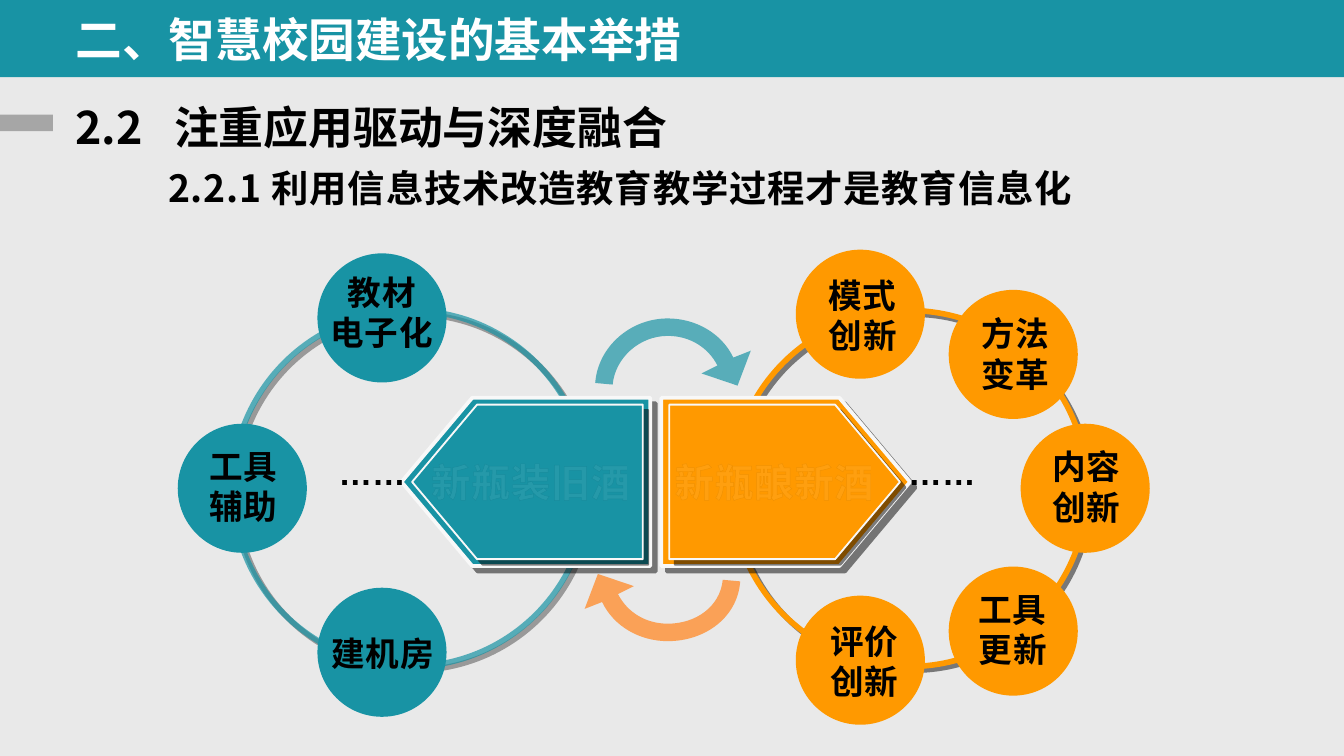
from dataclasses import dataclass

from lxml import etree
from pptx import Presentation
from pptx import util as u
from pptx.dml import color as c
from pptx.enum import shapes, text
from pptx.oxml import ns


@dataclass(frozen=True)
class Theme:
    teal: str = "1893A4"
    gold: str = "FF9900"
    peach: str = "FF8F33"
    grey: str = "A6A6A6"
    back: str = "E9E9E9"
    pale: str = "F8F8F8"
    white: str = "FFFFFF"
    black: str = "000000"
    dim: str = "080808"
    edge: str = "101A26"
    sans: str = "Noto Sans CJK SC"
    plain: str = "Arial"
    title: float = 25
    head: float = 24
    sub: float = 20
    core: float = 21
    label: float = 18


T = Theme()
KIND = shapes.MSO_SHAPE
DISC = 2.44
MID = (12.62, 9.07)  # centre between the two curved arrows


def rgb(tone):
    return c.RGBColor.from_string(tone)


def child(node, tag, **attrs):
    return etree.SubElement(node, ns.qn(tag), {k: str(v) for k, v in attrs.items()})


def fade(node, share):
    """Set the opacity, in percent, of the solid colour below node."""
    tone = node.find(ns.qn("a:solidFill")).find(ns.qn("a:srgbClr"))
    child(tone, "a:alpha", val=share * 1000)


def paint(item, fill=None, line=None, width=1):
    item.shadow.inherit = False
    if fill:
        item.fill.solid()
        item.fill.fore_color.rgb = rgb(fill)
    else:
        item.fill.background()
    if line:
        item.line.color.rgb = rgb(line)
        item.line.width = u.Pt(width)
    else:
        item.line.fill.background()


def shape(pool, kind, x, y, w, h, **style):
    item = pool.add_shape(kind, *map(u.Cm, (x, y, w, h)))
    paint(item, **style)
    return item


def shade(item, tone, dist):
    """Cast a hard, half-clear shadow to the lower right."""
    glow = item._element.spPr.find(ns.qn("a:effectLst"))
    cast = child(glow, "a:outerShdw", blurRad=0, dist=u.Pt(dist),
                 dir=45 * 60000, algn="ctr", rotWithShape=0)
    child(child(cast, "a:srgbClr", val=tone), "a:alpha", val=50000)


def write(pool, words, x, y, w, h, size, tone=T.black, face=T.sans,
          trim=False, mid=False, wrap=True, lead=None, hang=None):
    """Add bold text; trim gives it a faint outline and wider tracking."""
    frame = pool.add_textbox(*map(u.Cm, (x, y, w, h))).text_frame
    frame.word_wrap = wrap
    if not lead:
        frame.auto_size = text.MSO_AUTO_SIZE.SHAPE_TO_FIT_TEXT
    frame.text = words
    for para in frame.paragraphs:
        props = para._p.get_or_add_pPr()
        if hang:
            props.set("marL", str(u.Cm(hang)))
            props.set("indent", str(-u.Cm(hang)))
        if mid:
            para.alignment = text.PP_ALIGN.CENTER
        if lead:
            para.line_spacing = u.Pt(lead)
        font = para.font
        font.size, font.bold, font.name = u.Pt(size), True, face
        font.color.rgb = rgb(tone)
        base = props.find(ns.qn("a:defRPr"))
        child(base, "a:ea", typeface=face)
        if trim:
            base.set("spc", "40")
            line = child(base, "a:ln", w=u.Pt(1.06))
            child(child(line, "a:solidFill"), "a:srgbClr", val=T.edge)
            fade(line, 6)
            base.insert(0, line)


def ring(pool, x, tone, clear=None):
    item = shape(pool, KIND.OVAL, x, 5.87, 6.73, 6.73, line=tone, width=3)
    shade(item, T.dim, 2.8)
    if clear:
        fade(item.line._ln, clear)


def plate(pool, x, inset, tone, flip=False):
    """Group two nested pentagons, pointing left when flipped."""
    group = pool.add_group_shape().shapes
    for left, top, w, h, width in ((x, 7.52, 4.7, 3.18, 2),
                                   (x + inset, 7.65, 4.36, 2.92, 1)):
        item = shape(group, KIND.PENTAGON, left, top, w, h,
                     fill=tone, line=T.pale, width=width)
        item.adjustments[0] = 0.42
        shade(item, T.black, 4.2)
        if flip:
            item._element.spPr.find(ns.qn("a:xfrm")).set("flipH", "1")


def bend(item, starts):
    """Turn the three line segments from each start into one curve."""
    lines = list(item._element.iter(ns.qn("a:lnTo")))
    for start in starts:
        trio = lines[start:start + 3]
        curve = etree.Element(ns.qn("a:cubicBezTo"))
        trio[0].addprevious(curve)
        for line in trio:
            curve.append(line[0])
            line.getparent().remove(line)


def curl(pool, tone, clear, turn=1, cut=0):
    """Draw a curved arrow above MID, or below it when turn is -1.

    cut shortens the tail.
    """
    spots = [
        (0.94, -2.16),
        (0.76, -2.51), (0.41, -2.72), (0, -2.72),
        (-0.53, -2.72), (-0.99, -2.31 - cut), (-1.04, -1.8 - cut),
        (-1.37, -1.83 - cut),
        (-1.32, -2.51 - cut), (-0.71, -3.05), (0, -3.05),
        (0.53, -3.05), (1.02, -2.77), (1.24, -2.31),
        (1.57, -2.44), (1.32, -1.78), (0.64, -2.01),
    ]
    spots = [(u.Cm(MID[0] + turn * x), u.Cm(MID[1] + turn * y)) for x, y in spots]
    pen = pool.build_freeform(*spots[0])
    pen.add_line_segments(spots[1:], close=True)
    item = pen.convert_to_shape()
    bend(item, (0, 3, 7, 10))
    paint(item, fill=tone)
    fade(item._element.spPr, clear)


def disc(pool, tone, spot, words, x, y, w, h=1.8):
    shape(pool, KIND.OVAL, *spot, DISC, DISC, fill=tone)
    write(pool, words, x, y, w, h, T.label, trim=True, mid=True)


def main():
    deck = Presentation()
    deck.slide_width, deck.slide_height = u.Cm(25.4), u.Cm(14.29)
    slide = deck.slides.add_slide(deck.slide_layouts[6])
    slide.background.fill.solid()
    slide.background.fill.fore_color.rgb = rgb(T.back)
    pool = slide.shapes

    shape(pool, KIND.RECTANGLE, 0, 0, 25.4, 1.46, fill=T.teal)
    shape(pool, KIND.RECTANGLE, 0, 2.17, 1, 0.31, fill=T.grey)
    write(pool, "二、智慧校园建设的基本举措", 1.18, 0.08, 22.86, 1.27,
          T.title, T.white, lead=30)
    write(pool, "2.2\t注重应用驱动与深度融合", 1.17, 1.71, 22.07, 1.37,
          T.head, lead=30, hang=1.87)
    write(pool, "2.2.1 利用信息技术改造教育教学过程才是教育信息化",
          2.93, 3, 17.78, 1.12, T.sub, trim=True, wrap=False)

    ring(pool, 13.82, T.gold)
    ring(pool, 4.39, T.teal, clear=69)
    plate(pool, 7.59, 0.2, T.teal, flip=True)
    plate(pool, 12.5, 0.15, T.gold)
    curl(pool, T.teal, 69)
    curl(pool, T.peach, 80, turn=-1, cut=0.09)

    for x in (6.15, 16.92):
        write(pool, "……", x, 8.41, 1.96, 1.02, T.label, face=T.plain)
    for words, x in (("新瓶装旧酒", 7.9), ("新瓶酿新酒", 12.5)):
        write(pool, words, x, 8.53, 4.7, 1.14, T.core, T.white, trim=True)

    for entry in (
        ((15.04, 4.72), "模式创新", 15.19, 5.07, 2.24),
        ((17.93, 5.48), "方法变革", 18.04, 5.8, 2.31),
        ((19.29, 8.01), "内容创新", 19.34, 8.31, 2.39),
        ((15.04, 11.26), "评价创新", 15.22, 11.61, 2.24),
        ((17.93, 10.71), "工具更新", 18.02, 11, 2.24),
    ):
        disc(pool, T.gold, *entry)
    for entry in (
        ((6, 4.79), "教材\n电子化", 5.87, 5.01, 2.69),
        ((3.36, 8.01), "工具辅助", 3.57, 8.3, 2.06),
        ((6, 11.11), "建机房", 5.89, 11.84, 2.69, 1.02),
    ):
        disc(pool, T.teal, *entry)

    deck.save("out.pptx")


if __name__ == "__main__":
    main()
